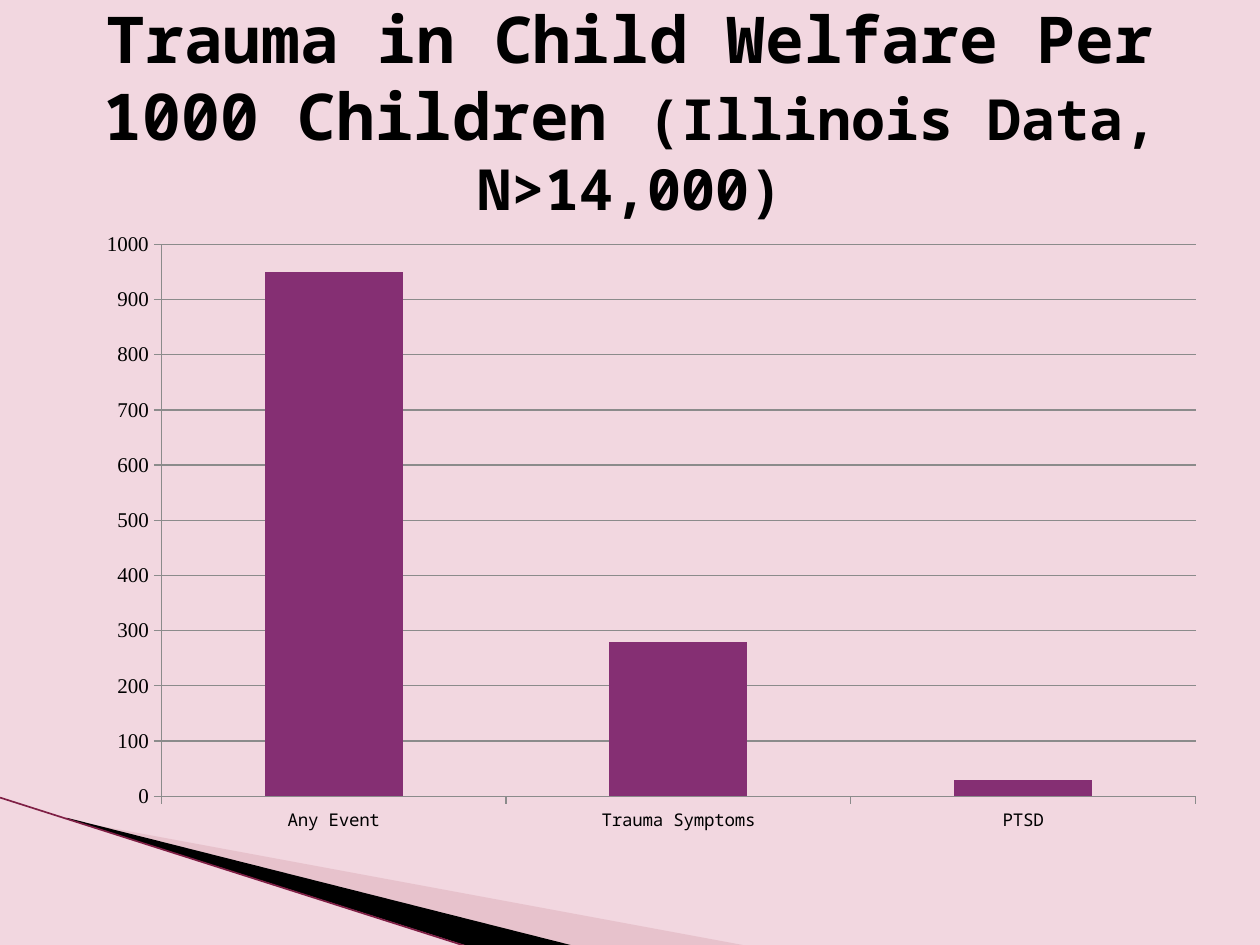
from lxml import etree
from pptx import Presentation
from pptx.chart import data as cd
from pptx.dml.color import RGBColor
from pptx.enum import chart as ch, shapes as sh, text as tx
from pptx.oxml import parse_xml
from pptx.oxml.ns import nsdecls, qn
from pptx.util import Inches, Pt

MONO, SERIF = "Noto Sans Mono", "Times New Roman"
INK, GRID, PLUM = "000000", "8B8B8B", "852F73"


def paint(fmt, color):
    """Give a fill or a line one solid colour."""
    fill = getattr(fmt, "fill", fmt)
    fill.solid()
    fill.fore_color.rgb = RGBColor.from_string(color)


def style(font, size, name=MONO, bold=False):
    font.size, font.name, font.bold = Pt(size), name, bold
    font.color.rgb = RGBColor.from_string(INK)


def wedge(slide, box, pts, color, alpha=100):
    """Closed outline; points are inches from the box corner."""
    x, y = box[:2]
    pts = [(Inches(x + a), Inches(y + b)) for a, b in pts]
    form = slide.shapes.build_freeform(*pts[0])
    form.add_line_segments(pts[1:], close=True)
    shape = form.convert_to_shape()
    shape.shadow.inherit = False
    paint(shape.fill, color)
    shape.line.fill.background()
    if alpha < 100:
        tint = shape.fill._xPr.find(".//" + qn("a:srgbClr"))
        etree.SubElement(tint, qn("a:alpha"), val=str(alpha * 1000))


def corner(slide, box):
    """Fan of wedges in the lower left corner."""
    x, y, w, h = box
    wedge(slide, box, [(0.55, 0.18), (w, h), (4.56, h), (0.55, 0.17)], "D8A3AF", 40)
    wedge(slide, box, [(0.53, 0.16), (4.57, h), (3.72, h), (0.54, 0.17)], INK)
    edge = slide.shapes.add_connector(
        sh.MSO_CONNECTOR.STRAIGHT, Inches(x), Inches(y), Inches(x + 3.7), Inches(y + h))
    paint(edge.line, "7F1F45")
    edge.line.width = Pt(0.95)
    etree.SubElement(edge._element.spPr, qn("a:effectLst"))


def title(slide, box, parts):
    frame = slide.shapes.add_textbox(*map(Inches, box)).text_frame
    frame.word_wrap = True
    frame.vertical_anchor = tx.MSO_ANCHOR.MIDDLE
    para = frame.paragraphs[0]
    para.alignment = tx.PP_ALIGN.CENTER
    for words, size in parts:
        run = para.add_run()
        run.text = words
        style(run.font, size, bold=True)


def bars(slide, box, cats, vals):
    data = cd.CategoryChartData()
    data.categories = cats
    data.add_series("Series 1", vals)
    chart = slide.shapes.add_chart(
        ch.XL_CHART_TYPE.COLUMN_CLUSTERED, *map(Inches, box), data).chart
    chart.has_legend = chart.has_title = False
    style(chart.font, 10)

    # Columns
    plot = chart.plots[0]
    plot.gap_width, plot.vary_by_categories = 150, False
    paint(plot.series[0].format, PLUM)

    # Axes
    for axis, size, face in ((chart.category_axis, 10, MONO), (chart.value_axis, 12, SERIF)):
        style(axis.tick_labels.font, size, face)
        axis.major_tick_mark = ch.XL_TICK_MARK.OUTSIDE
        axis.minor_tick_mark = ch.XL_TICK_MARK.NONE
        paint(axis.format.line, GRID)
    axis = chart.value_axis
    axis.minimum_scale, axis.maximum_scale, axis.major_unit = 0, 1000, 100
    axis.has_major_gridlines = True
    paint(axis.major_gridlines.format.line, GRID)

    # Fixed inner plot area, in inches from the chart corner
    w, h = box[2:]
    area = chart._chartSpace.chart.plotArea
    for old in area.findall(qn("c:layout")):
        area.remove(old)
    sizes = "".join(f'<c:{k} val="{v}"/>' for k, v in
                    (("x", 0.61 / w), ("y", 0.19 / h), ("w", 8.21 / w), ("h", 4.38 / h)))
    area.insert(0, parse_xml(
        f'<c:layout {nsdecls("c")}><c:manualLayout><c:layoutTarget val="inner"/>'
        f'<c:xMode val="edge"/><c:yMode val="edge"/>{sizes}</c:manualLayout></c:layout>'))


def main():
    prs = Presentation()
    prs.slide_width, prs.slide_height = Inches(10), Inches(7.5)
    slide = prs.slides.add_slide(prs.slide_layouts[6])
    paint(slide.background.fill, "F2D7E0")
    corner(slide, (0, 6.33, 5.95, 1.18))
    title(slide, (0.42, 0.25, 9.17, 1.25), [
        ("Trauma in Child Welfare Per 1000 Children ", 36.9),
        ("(Illinois Data, N>14,000)", 32.4)])
    bars(slide, (0.67, 1.75, 9, 4.95),
         ["Any Event", "Trauma Symptoms", "PTSD"], [950, 280, 30])
    prs.save("out.pptx")


if __name__ == "__main__":
    main()
